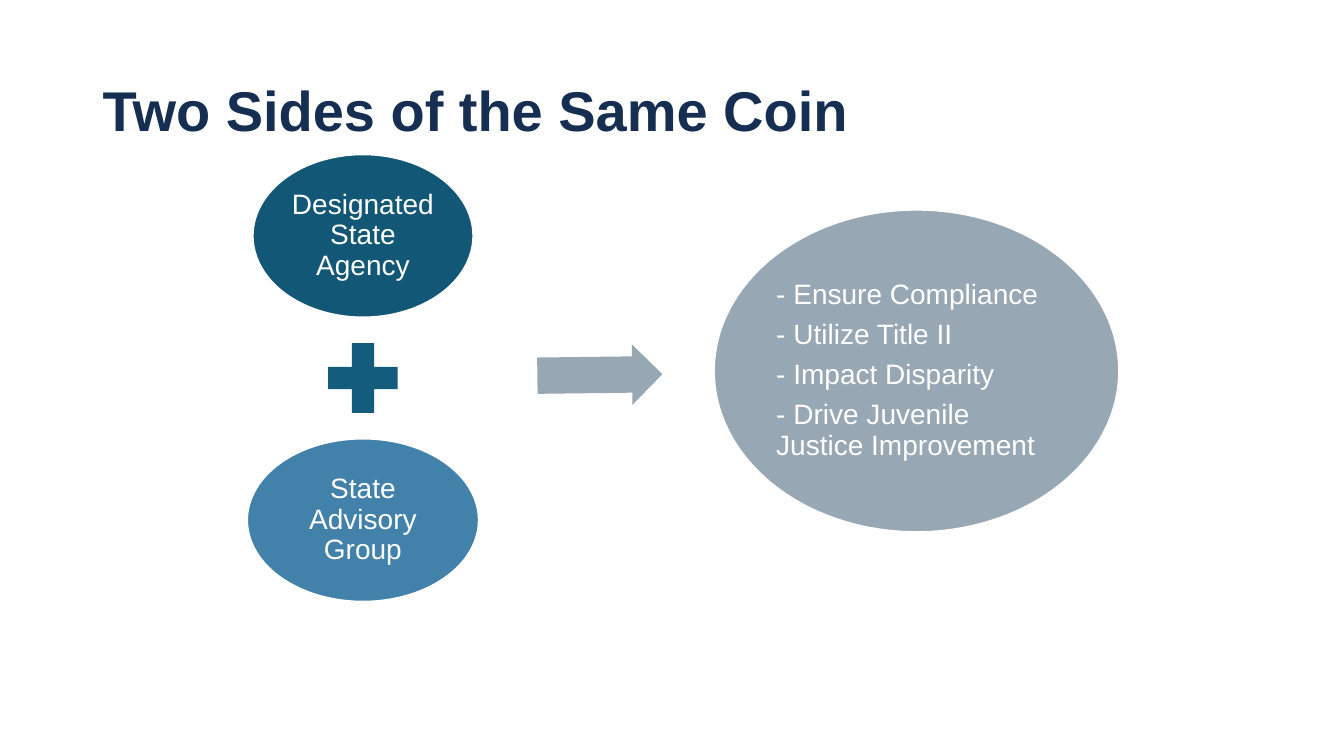
from dataclasses import dataclass

from pptx import Presentation
from pptx.dml.color import RGBColor
from pptx.enum.shapes import MSO_SHAPE
from pptx.enum.text import MSO_ANCHOR, PP_ALIGN
from pptx.util import Inches, Pt

ELLIPSE, PLUS, ARROW = MSO_SHAPE.OVAL, MSO_SHAPE.MATH_PLUS, MSO_SHAPE.RIGHT_ARROW
MIDDLE = MSO_ANCHOR.MIDDLE
LEFT, CENTER = PP_ALIGN.LEFT, PP_ALIGN.CENTER


@dataclass(frozen=True)
class Theme:
    font: str = "Arial"
    title_size: int = 40
    body_size: int = 20
    line_spacing: float = 0.9
    paragraph_gap: int = 7
    outline_width: float = 1.5
    navy: str = "162E51"
    white: str = "FFFFFF"
    agency: str = "135776"
    plus: str = "145C7C"
    group: str = "4281A9"
    arrow: str = "97A7B4"
    outcome: str = "98A7B4"


THEME = Theme()


def rgb(value):
    return RGBColor.from_string(value)


def write(frame, lines, size, color, align=LEFT, bold=False, gap=0):
    """Fill a text frame with one paragraph per line."""
    frame.word_wrap = True
    frame.vertical_anchor = MIDDLE
    for index, line in enumerate(lines):
        paragraph = frame.add_paragraph() if index else frame.paragraphs[0]
        paragraph.alignment = align
        paragraph.line_spacing = THEME.line_spacing
        paragraph.space_after = Pt(gap)
        run = paragraph.add_run()
        run.text = line
        run.font.name = THEME.font
        run.font.size = Pt(size)
        run.font.bold = bold
        run.font.color.rgb = rgb(color)


def add_filled(slide, kind, box, color):
    symbol = slide.shapes.add_shape(kind, *map(Inches, box))
    symbol.shadow.inherit = False
    symbol.fill.solid()
    symbol.fill.fore_color.rgb = rgb(color)
    symbol.line.fill.background()
    return symbol


def add_bubble(slide, box, color, lines, align=CENTER):
    """Outlined ellipse carrying its own text."""
    bubble = add_filled(slide, ELLIPSE, box, color)
    bubble.line.color.rgb = rgb(THEME.white)
    bubble.line.width = Pt(THEME.outline_width)
    frame = bubble.text_frame
    frame.margin_left = frame.margin_right = Inches(0.03)
    frame.margin_top = frame.margin_bottom = Inches(0.03)
    write(frame, lines, THEME.body_size, THEME.white, align, gap=THEME.paragraph_gap)


def add_title(slide, box, text):
    title = slide.shapes.add_textbox(*map(Inches, box))
    write(title.text_frame, [text], THEME.title_size, THEME.navy, bold=True)


def add_partners(slide, box):
    """Two bubbles at the top and bottom of the box, a plus between them."""
    left, top, width, height = box
    center = left + width / 2
    bubble_height, agency_width, plus_size = 1.62, 2.19, 0.94
    add_bubble(slide, (center - agency_width / 2, top, agency_width, bubble_height),
               THEME.agency, ["Designated State Agency"])
    add_filled(slide, PLUS, (center - plus_size / 2, top + (height - plus_size) / 2,
                             plus_size, plus_size), THEME.plus)
    add_bubble(slide, (left, top + height - bubble_height, width, bubble_height),
               THEME.group, ["State Advisory Group"])


def add_outcome(slide, box):
    """Arrow at the left of the box, outcome bubble filling the rest."""
    left, top, width, height = box
    arrow_width, arrow_height, bubble_offset = 1.24, 0.6, 1.75
    arrow = add_filled(slide, ARROW, (left, top + 1.34, arrow_width, arrow_height),
                       THEME.arrow)
    arrow.adjustments[0] = 0.6
    arrow.adjustments[1] = 0.5
    arrow.rotation = 359.3
    add_bubble(slide, (left + bubble_offset, top, width - bubble_offset, height),
               THEME.outcome,
               ["- Ensure Compliance", "- Utilize Title II", "- Impact Disparity",
                "- Drive Juvenile Justice Improvement"], LEFT)


def main():
    deck = Presentation()
    deck.slide_width, deck.slide_height = Inches(13.33), Inches(7.5)
    slide = deck.slides.add_slide(deck.slide_layouts[6])
    add_title(slide, (0.92, 0.4, 11.5, 1.45), "Two Sides of the Same Coin")
    add_partners(slide, (2.45, 1.53, 2.3, 4.44))
    add_outcome(slide, (5.33, 2.08, 5.77, 3.2))
    deck.save("out.pptx")


if __name__ == "__main__":
    main()
